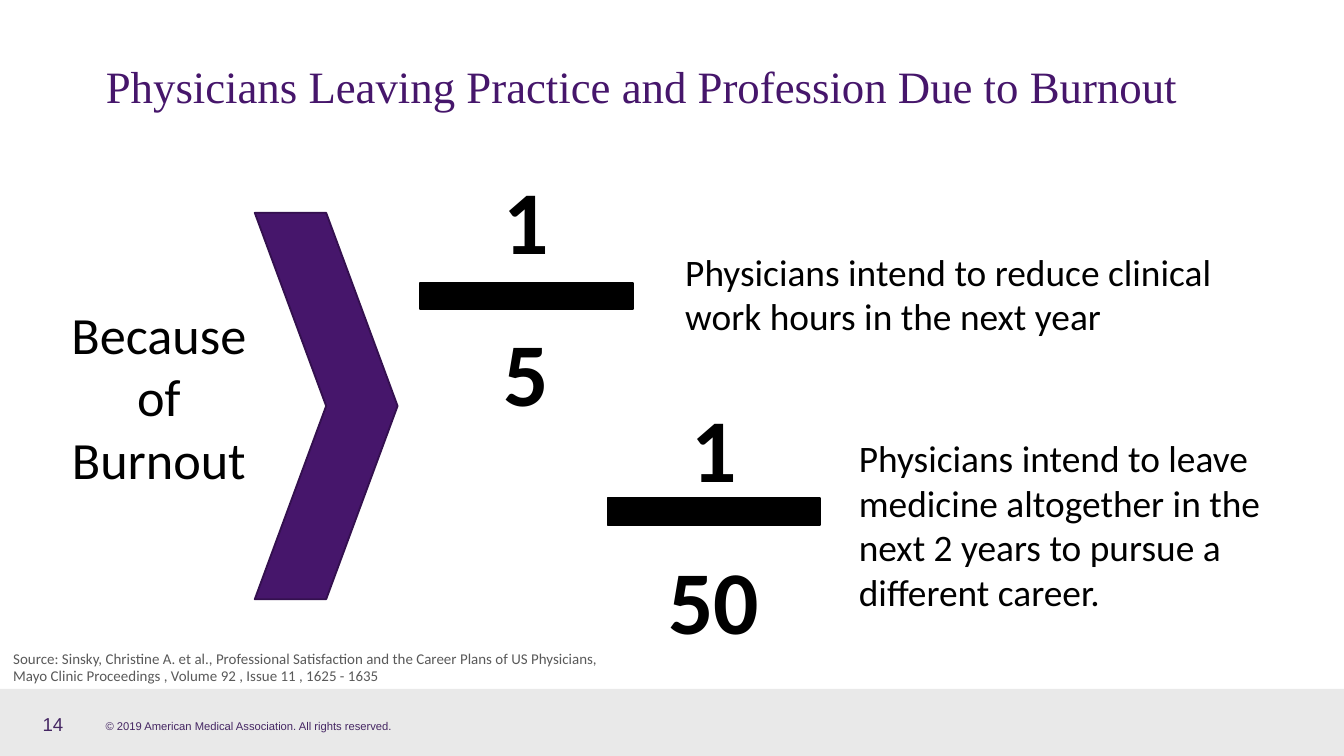
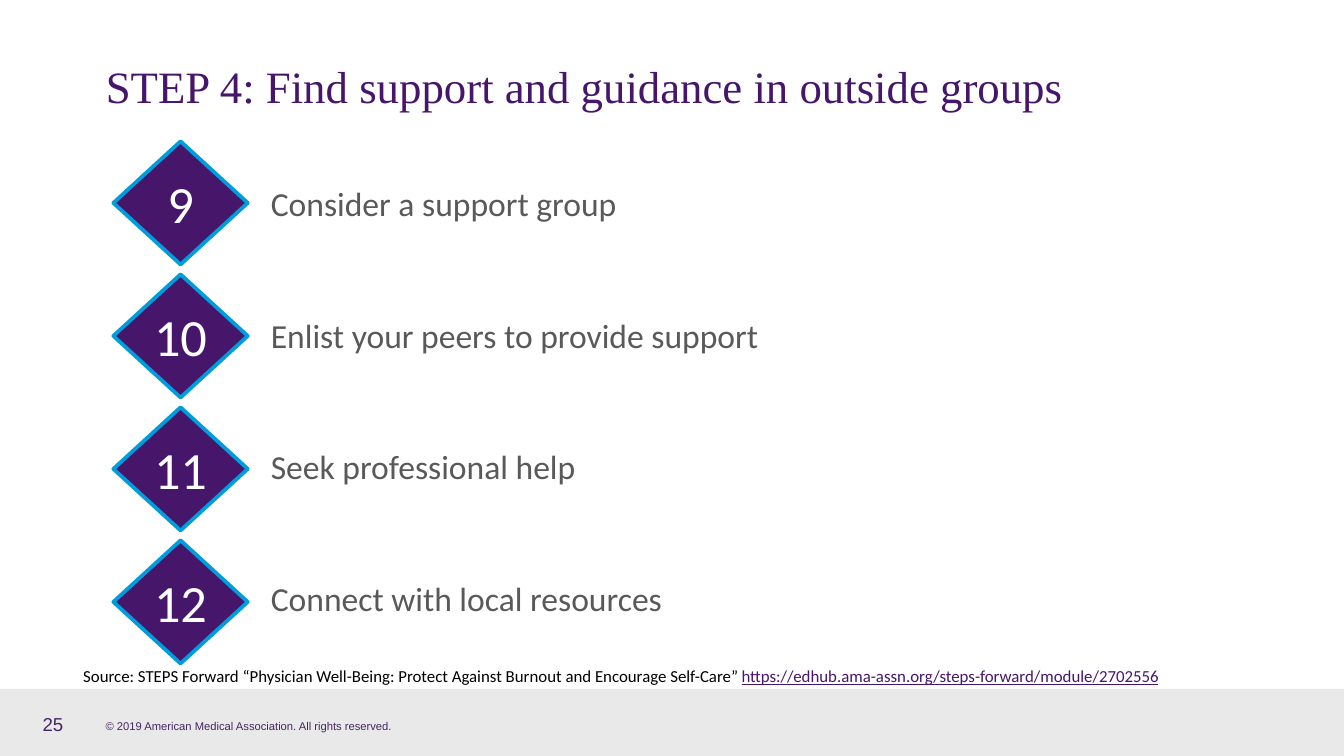
from dataclasses import dataclass

from lxml.etree import SubElement
from pptx import Presentation
from pptx.dml.color import RGBColor
from pptx.enum.shapes import MSO_SHAPE
from pptx.enum.text import MSO_ANCHOR, MSO_AUTO_SIZE, PP_ALIGN
from pptx.oxml.ns import qn
from pptx.util import Pt

EMU_PER_PX = 9525


@dataclass(frozen=True)
class Theme:
    purple: str = "46166B"
    purple_edge: str = "34104F"
    footer_ink: str = "452663"
    blue: str = "009DDC"
    band: str = "E0E0E0"
    grey: str = "595959"
    black: str = "000000"
    white: str = "FFFFFF"
    title_font: str = "Times New Roman"
    body_font: str = "Calibri"
    footer_font: str = "Arial"
    title_size: int = 24
    fraction_size: int = 48
    big_size: int = 28
    body_size: int = 20
    step_size: int = 18
    number_size: int = 10
    citation_size: int = 8
    link_size: int = 9
    copyright_size: int = 6


def px(*lengths):
    return [length * EMU_PER_PX for length in lengths]


def color(value):
    return RGBColor.from_string(value)


class SlideBuilder:
    def __init__(self, theme):
        self.theme = theme
        self.deck = Presentation()
        self.deck.slide_width, self.deck.slide_height = px(960, 540)
        self.page = None

    def start(self, title, number):
        theme = self.theme
        self.page = self.deck.slides.add_slide(self.deck.slide_layouts[5])
        band = self.shape(MSO_SHAPE.RECTANGLE, (0, 492, 960, 48), theme.band)
        fill_color = band.element.spPr.find(qn("a:solidFill"))[0]
        SubElement(fill_color, qn("a:alpha"), val="70000")
        self.text((66, 509, 265, 19),
                  ["© 2019 American Medical Association. All rights reserved."],
                  theme.copyright_size, theme.footer_ink, theme.footer_font)
        self.text((21, 503, 97, 29), [number], theme.number_size,
                  theme.footer_ink, theme.footer_font, anchor=MSO_ANCHOR.MIDDLE)
        heading = self.page.shapes.title
        heading.left, heading.top, heading.width, heading.height = px(66, 14, 828, 94)
        self.set_lines(heading.text_frame, [title], theme.title_size, theme.purple,
                       theme.title_font, anchor=MSO_ANCHOR.MIDDLE)

    def set_lines(self, frame, lines, size, ink, font=None, align=PP_ALIGN.LEFT,
                  anchor=MSO_ANCHOR.TOP, bold=False, space_after=0):
        frame.word_wrap = True
        frame.auto_size = MSO_AUTO_SIZE.NONE
        frame.vertical_anchor = anchor
        for index, line in enumerate(lines):
            para = frame.add_paragraph() if index else frame.paragraphs[0]
            para.text = line
            para.alignment = align
            para.space_after = Pt(space_after)
            para.font.name = font or self.theme.body_font
            para.font.size = Pt(size)
            para.font.bold = bold
            para.font.color.rgb = color(ink)

    def text(self, area, lines, size, ink, font=None, **style):
        box = self.page.shapes.add_textbox(*px(*area))
        self.set_lines(box.text_frame, lines, size, ink, font, **style)
        return box

    def shape(self, kind, area, fill, line=None, line_width=1):
        shape = self.page.shapes.add_shape(kind, *px(*area))
        shape.shadow.inherit = False
        shape.fill.solid()
        shape.fill.fore_color.rgb = color(fill)
        if line:
            shape.line.color.rgb = color(line)
            shape.line.width = Pt(line_width)
        else:
            shape.line.fill.background()
        return shape

    def fraction(self, left, text_top, bar_top, denominator):
        theme = self.theme
        self.text((left, text_top, 152, 197), ["1", denominator],
                  theme.fraction_size, theme.black, align=PP_ALIGN.CENTER,
                  bold=True, space_after=24)
        self.shape(MSO_SHAPE.RECTANGLE, (left, bar_top, 152, 19),
                   theme.black, theme.black)

    def step(self, index, number, label):
        theme = self.theme
        diamond = self.shape(MSO_SHAPE.DIAMOND, (81, 101 + 95 * index, 96, 88),
                             theme.purple, theme.blue, 2)
        frame = diamond.text_frame
        frame.margin_left = frame.margin_right = 0
        frame.margin_top = frame.margin_bottom = 0
        self.set_lines(frame, [str(number)], theme.big_size, theme.white,
                       align=PP_ALIGN.CENTER, anchor=MSO_ANCHOR.MIDDLE)
        frame.word_wrap = False
        self.text((184, 126 + 94 * index, 660, 37), [label],
                  theme.step_size, theme.grey)

    def link(self, box, address):
        span = box.text_frame.paragraphs[-1].add_run()
        span.text = address
        span.font.underline = True
        span.font.color.rgb = color(self.theme.purple)


def add_burnout_page(builder):
    theme = builder.theme
    builder.start("Physicians Leaving Practice and Profession Due to Burnout", "14")
    builder.fraction(300, 113, 202, "5")
    builder.fraction(434, 276, 356, "50")
    builder.text((41, 211, 145, 145), ["Because of Burnout"], theme.big_size,
                 theme.black, align=PP_ALIGN.CENTER)
    builder.shape(MSO_SHAPE.CHEVRON, (182, 152, 102, 276),
                  theme.purple, theme.purple_edge)
    builder.text((480, 173, 425, 74),
                 ["Physicians intend to reduce clinical work hours in the next year"],
                 theme.body_size, theme.black)
    builder.text((604, 306, 356, 139),
                 ["Physicians intend to leave medicine altogether in the "
                  "next 2 years to pursue a different career."],
                 theme.body_size, theme.black)
    builder.text((0, 459, 444, 36),
                 ["Source: Sinsky, Christine A. et al., Professional Satisfaction "
                  "and the Career Plans of US Physicians,",
                  "Mayo Clinic Proceedings , Volume 92 , Issue 11 , 1625 - 1635"],
                 theme.citation_size, theme.grey)


def add_support_page(builder):
    theme = builder.theme
    builder.start("STEP 4: Find support and guidance in outside groups", "25")
    labels = ["Consider a support group", "Enlist your peers to provide support",
              "Seek professional help", "Connect with local resources"]
    for index, label in enumerate(labels):
        builder.step(index, 9 + index, label)
    source = builder.text((50, 471, 808, 24),
                          ["Source: STEPS Forward “Physician Well-Being: Protect "
                           "Against Burnout and Encourage Self-Care” "],
                          theme.link_size, theme.black)
    builder.link(source, "https://edhub.ama-assn.org/steps-forward/module/2702556")


def main():
    builder = SlideBuilder(Theme())
    add_burnout_page(builder)
    add_support_page(builder)
    builder.deck.save("out.pptx")


if __name__ == "__main__":
    main()
